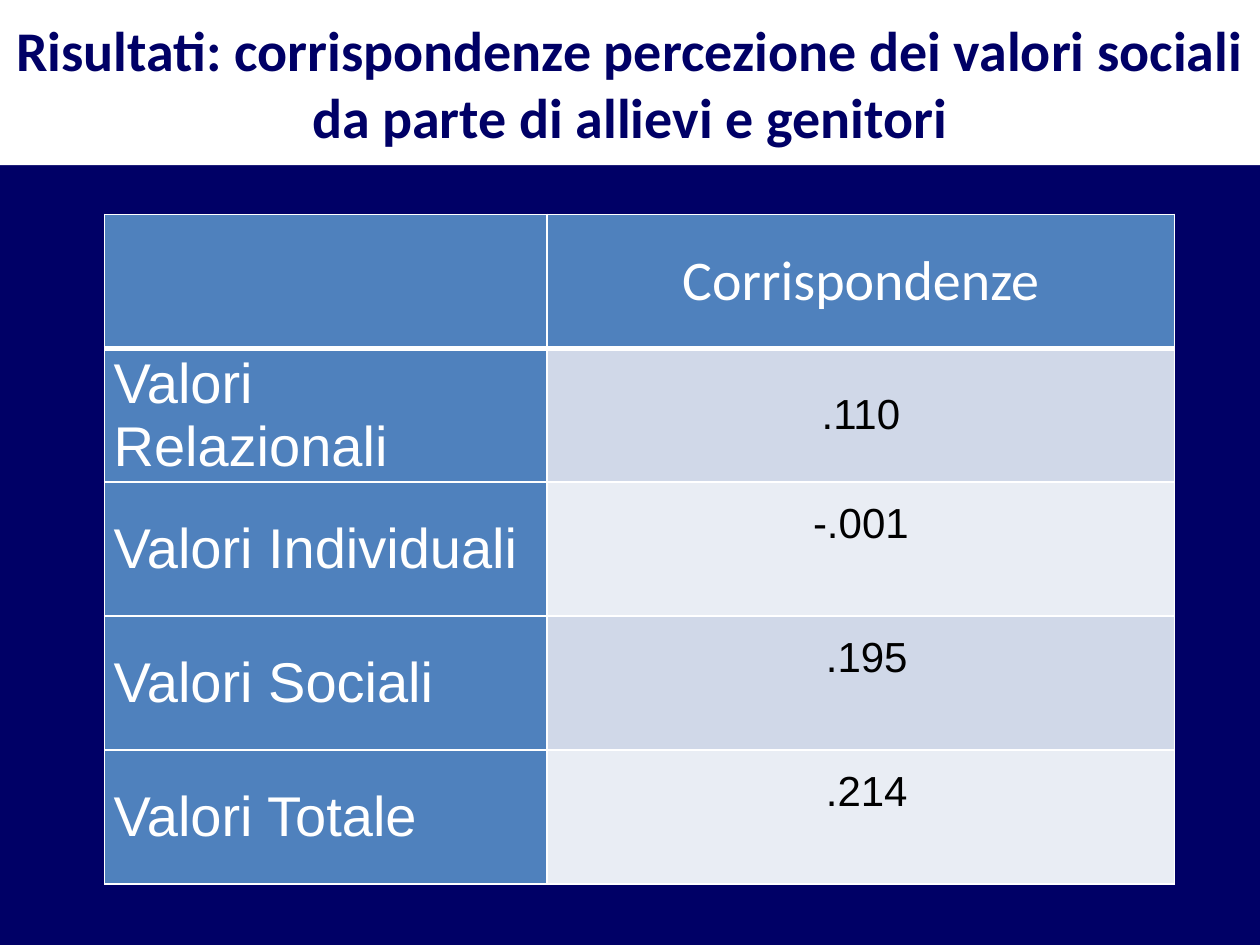
import pptx
import pptx.dml.color
import pptx.enum.text
import pptx.oxml
import pptx.oxml.ns
import pptx.util
from pptx.util import Cm

NAVY, WHITE, BLACK, BLUE = "000066", "FFFFFF", "000000", "4F81BD"
BANDS = ("D0D8E8", "E9EDF4")
ALIGN = pptx.enum.text.PP_ALIGN
MIDDLE = pptx.enum.text.MSO_ANCHOR.MIDDLE

TITLE = ("Risultati: corrispondenze percezione dei valori sociali "
         "da parte di allievi e genitori")
VALUE_HEADING = "Corrispondenze"
CORRELATIONS = [
    ("Valori Relazionali", ".110"),
    ("Valori Individuali", "-.001"),
    ("Valori Sociali", " .195"),
    ("Valori Totale", " .214"),
]


def rgb(color):
    return pptx.dml.color.RGBColor.from_string(color)


def paint(fill, color):
    fill.solid()
    fill.fore_color.rgb = rgb(color)


def style_paragraph(paragraph, font_name, size, color, bold=False, align=ALIGN.LEFT):
    paragraph.alignment = align
    font = paragraph.font
    font.name, font.size, font.bold = font_name, pptx.util.Pt(size), bold
    font.color.rgb = rgb(color)


def set_borders(cell, **widths):
    """Draw white borders; widths are points, given in the order L, R, T, B."""
    properties = cell._tc.get_or_add_tcPr()
    for side, points in widths.items():
        properties.append(pptx.oxml.parse_xml(
            f'<a:ln{side} {pptx.oxml.ns.nsdecls("a")} w="{pptx.util.Pt(points)}">'
            f'<a:solidFill><a:srgbClr val="{WHITE}"/></a:solidFill></a:ln{side}>'))


def add_title_band(slide, left, top, width, height):
    title = slide.shapes.title
    title.left, title.top, title.width, title.height = left, top, width, height
    paint(title.fill, WHITE)
    frame = title.text_frame
    frame.text = TITLE
    frame.word_wrap = True
    frame.auto_size = pptx.enum.text.MSO_AUTO_SIZE.NONE
    frame.vertical_anchor = MIDDLE
    style_paragraph(frame.paragraphs[0], "Calibri", 32, NAVY, True, ALIGN.CENTER)


def fill_cell(cell, text, background, **text_style):
    cell.vertical_anchor = MIDDLE
    cell.margin_left = cell.margin_right = Cm(0.18)
    cell.margin_top = cell.margin_bottom = 0
    paint(cell.fill, background)
    cell.text = text
    style_paragraph(cell.text_frame.paragraphs[0], **text_style)


def add_correlation_table(slide, left, top, width, height):
    rows = [("", VALUE_HEADING), *CORRELATIONS]
    table = slide.shapes.add_table(len(rows), 2, left, top, width, height).table
    label_width = Cm(8.92)
    table.columns[0].width = label_width
    table.columns[1].width = width - label_width

    for row_index, (label, value) in enumerate(rows):
        label_cell, value_cell = table.rows[row_index].cells
        is_header = row_index == 0
        for cell in (label_cell, value_cell):
            set_borders(cell, L=1, R=1, T=3 if row_index == 1 else 1,
                        B=3 if is_header else 1)
        fill_cell(label_cell, label, BLUE, font_name="Arial", size=32, color=WHITE)
        if is_header:
            fill_cell(value_cell, value, BLUE, font_name="Calibri", size=32,
                      color=WHITE, align=ALIGN.CENTER)
        else:
            fill_cell(value_cell, value, BANDS[(row_index - 1) % 2], font_name="Arial",
                      size=24, color=BLACK, align=ALIGN.CENTER)
        if row_index > 1:
            value_cell.margin_bottom = Cm(1)  # lifts the value above the row's middle


def main():
    presentation = pptx.Presentation()
    presentation.slide_width, presentation.slide_height = Cm(25.4), Cm(19.05)
    slide = presentation.slides.add_slide(presentation.slide_layouts[5])
    paint(slide.background.fill, NAVY)
    add_title_band(slide, 0, 0, presentation.slide_width, Cm(3.33))
    add_correlation_table(slide, Cm(2.11), Cm(4.32), Cm(21.57), Cm(13.5))
    presentation.save("out.pptx")


if __name__ == "__main__":
    main()
